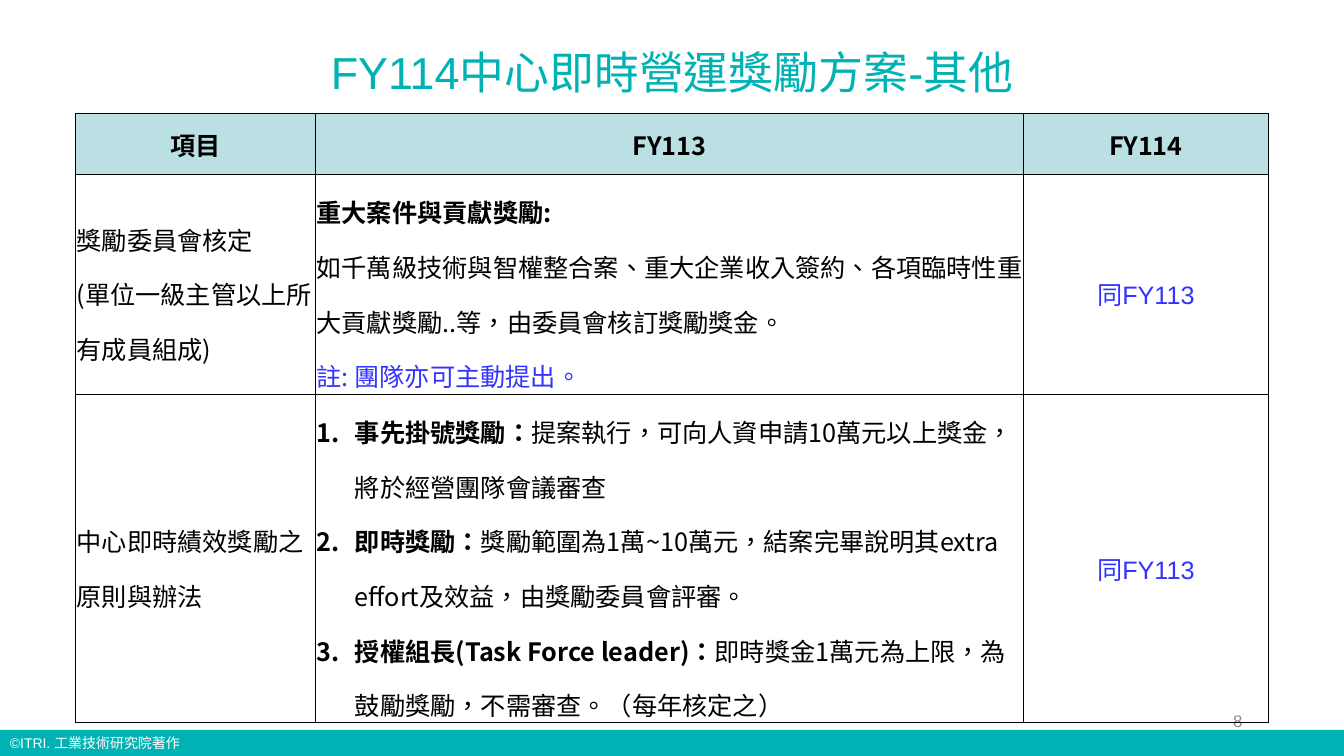
from lxml import etree
from pptx import Presentation
from pptx.dml.color import RGBColor
from pptx.enum.shapes import MSO_SHAPE as Shape
from pptx.enum.text import MSO_ANCHOR as Anchor, PP_ALIGN as Align
from pptx.oxml import parse_xml
from pptx.oxml.ns import nsdecls, qn
from pptx.util import Inches, Pt

COLORS = {"teal": "00B2B3", "pale": "BBE0E3", "blue": "3333FF",
          "black": "000000", "white": "FFFFFF", "gray": "8C8C8C"}
CJK = "Noto Sans CJK SC"


def write(frame, paragraphs, size=18, font=CJK, color="black", align=Align.LEFT,
          anchor=Anchor.TOP, spacing=None, numbered=False):
    """Fill a text frame; each paragraph is a list of (text, bold, color) spans."""
    frame.word_wrap = True
    frame.vertical_anchor = anchor
    for index, spans in enumerate(paragraphs):
        para = frame.paragraphs[0] if index == 0 else frame.add_paragraph()
        para.alignment = align
        if spacing:
            para.line_spacing = spacing
        if numbered:
            props = para._p.get_or_add_pPr()
            props.set("marL", str(Inches(0.38)))
            props.set("indent", str(-Inches(0.38)))
            number = etree.SubElement(props, qn("a:buAutoNum"))
            number.set("type", "arabicPeriod")
        for text, bold, tint in spans:
            for part, line in enumerate(text.split("\n")):
                if part:
                    para.add_line_break()
                span = para.add_run()
                span.text = line
                span.font.size = Pt(size)
                span.font.name = font
                span.font.bold = bold
                span.font.color.rgb = RGBColor.from_string(COLORS[tint or color])
                # Traditional Chinese language and font for the ideographs
                span._r.rPr.set("lang", "zh-TW")
                latin = span._r.rPr.find(qn("a:latin"))
                latin.addnext(parse_xml(f'<a:ea {nsdecls("a")} typeface="{CJK}"/>'))


def plain(text):
    return [[(text, False, None)]]


deck = Presentation()
deck.slide_width, deck.slide_height = Inches(13.33), Inches(7.5)
page = deck.slides.add_slide(deck.slide_layouts[6])

# Footer band
band = page.shapes.add_shape(Shape.RECTANGLE, 0, Inches(7.24), deck.slide_width, Inches(0.26))
band.shadow.inherit = False
band.fill.solid()
band.fill.fore_color.rgb = RGBColor.from_string(COLORS["teal"])
band.line.fill.background()

# Copyright line, title and page number
labels = [
    ("©ITRI. 工業技術研究院著作", (0, 7.24, 3.9, 0.27),
     dict(size=10, color="white")),
    ("FY114中心即時營運獎勵方案-其他", (0, 0.42, 13.33, 0.58),
     dict(size=32, color="teal", align=Align.CENTER, anchor=Anchor.MIDDLE)),
    ("8", (9.42, 6.95, 3, 0.4),
     dict(size=12, color="gray", align=Align.RIGHT, anchor=Anchor.MIDDLE)),
]
for text, place, style in labels:
    box = page.shapes.add_textbox(*map(Inches, place))
    write(box.text_frame, plain(text), font="Arial", **style)

# Table content: one (paragraphs, format) pair per cell
heading = dict(align=Align.CENTER, anchor=Anchor.MIDDLE)
topic = dict(anchor=Anchor.MIDDLE, spacing=1.5)
same = (plain("同FY113"), dict(font="Arial", color="blue", align=Align.CENTER,
                              anchor=Anchor.MIDDLE, spacing=1.5))
committee = [
    [("重大案件與貢獻獎勵:", True, None)],
    [("如千萬級技術與智權整合案、重大企業收入簽約、各項臨時性重大貢獻獎勵..等，"
      "由委員會核訂獎勵獎金。", False, None)],
    [("註: 團隊亦可主動提出。", False, "blue")],
]
rules = [
    ("事先掛號獎勵：", "提案執行，可向人資申請10萬元以上獎金，將於經營團隊會議審查"),
    ("即時獎勵：", "獎勵範圍為1萬~10萬元，結案完畢說明其extra effort及效益，由獎勵委員會評審。"),
    ("授權組長(Task Force leader)：", "即時獎金1萬元為上限，為鼓勵獎勵，不需審查。（每年核定之）"),
]
rows = [
    [([[(name, True, None)]], heading) for name in ("項目", "FY113", "FY114")],
    [(plain("獎勵委員會核定\n(單位一級主管以上所有成員組成)"), topic),
     (committee, dict(spacing=1.5)), same],
    [(plain("中心即時績效獎勵之原則與辦法"), topic),
     ([[(name, True, None), (detail, False, None)] for name, detail in rules],
      dict(spacing=1.5, numbered=True)), same],
]

# Table, with rows tall enough for their text
widths, heights = (2.38, 7.02, 2.43), (0.6, 2.18, 3.26)
table = page.shapes.add_table(3, 3, Inches(0.75), Inches(1.13),
                              Inches(sum(widths)), Inches(sum(heights))).table
for column, width in zip(table.columns, widths):
    column.width = Inches(width)
for row, height in zip(table.rows, heights):
    row.height = Inches(height)
for r, row in enumerate(rows):
    for c, (paragraphs, style) in enumerate(row):
        cell = table.cell(r, c)
        cell.margin_left = cell.margin_right = cell.margin_top = Inches(0.01)
        cell.margin_bottom = 0
        cell.vertical_anchor = style.get("anchor", Anchor.TOP)
        write(cell.text_frame, paragraphs, **{**style, "anchor": None})
        if r == 0:
            cell.fill.solid()
            cell.fill.fore_color.rgb = RGBColor.from_string(COLORS["pale"])
        else:
            cell.fill.background()
        for place, side in enumerate(("lnL", "lnR", "lnT", "lnB")):
            cell._tc.tcPr.insert(place, parse_xml(
                f'<a:{side} {nsdecls("a")} w="{Pt(0.75)}"><a:solidFill>'
                f'<a:srgbClr val="{COLORS["black"]}"/></a:solidFill></a:{side}>'))

deck.save("out.pptx")
